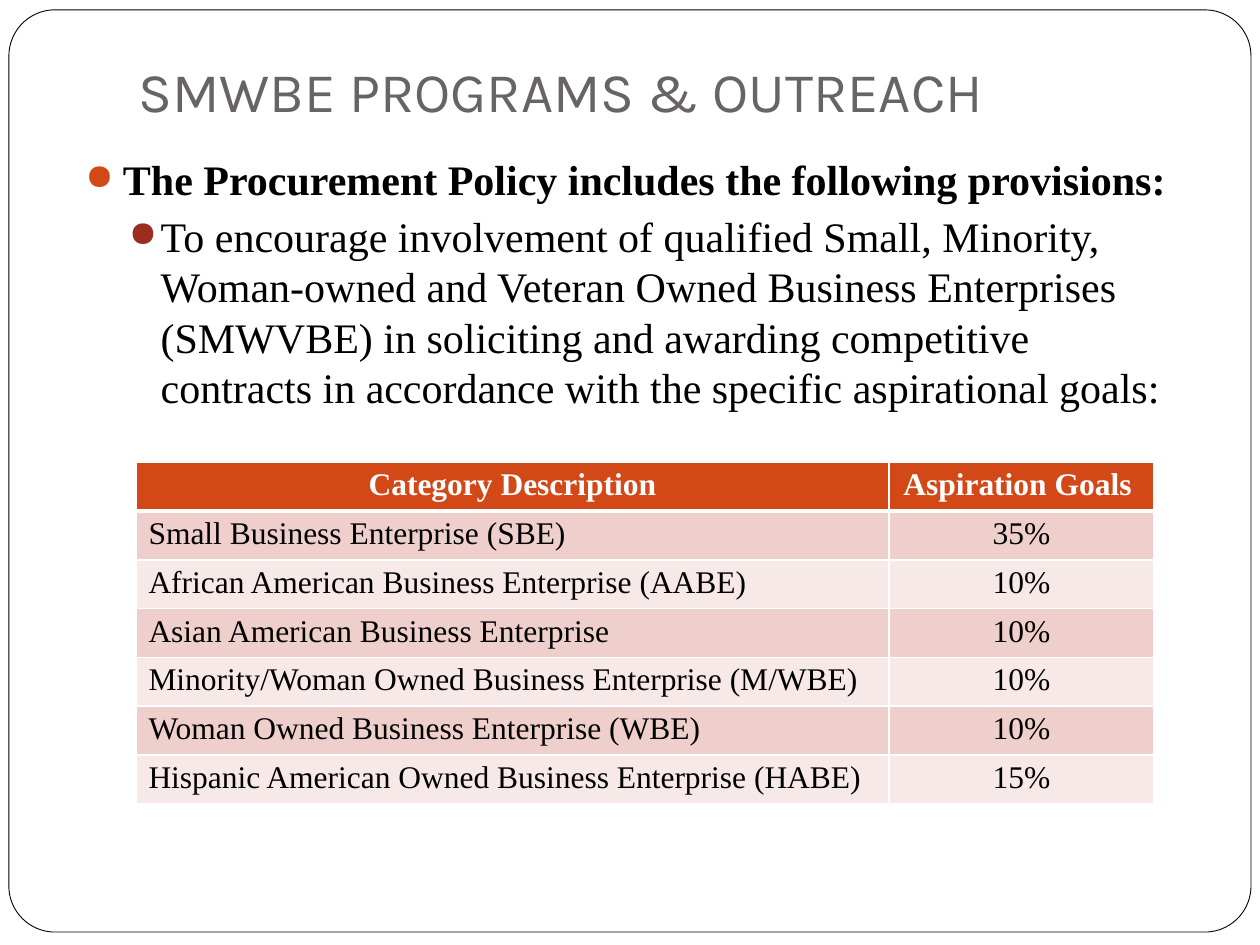
from dataclasses import dataclass

from lxml.etree import SubElement
from pptx import Presentation
from pptx.dml.color import RGBColor
from pptx.enum.shapes import MSO_SHAPE
from pptx.enum.text import MSO_ANCHOR, PP_ALIGN
from pptx.oxml.ns import qn
from pptx.util import Cm, Pt


@dataclass(frozen=True)
class Theme:
    title_font: str = "Karla"
    body_font: str = "Times New Roman"
    title_size: int = 32
    body_size: int = 24
    table_size: int = 18
    white: str = "FFFFFF"
    black: str = "000000"
    grey: str = "696464"
    orange: str = "D34817"
    red: str = "9B2D1F"
    bands: tuple = ("EFCFCC", "F7E9E8")


THEME = Theme()

PROVISIONS = [
    ("The Procurement Policy includes the following provisions:",
     dict(bold=True, before=5.8, bullet=THEME.orange, indent=0.76, hanging=0.76)),
    ("To encourage involvement of qualified Small, Minority, Woman-owned and "
     "Veteran Owned Business Enterprises (SMWVBE) in soliciting and awarding "
     "competitive contracts in accordance with the specific aspirational goals:",
     dict(level=1, before=3.7, bullet=THEME.red, indent=1.52, hanging=0.64)),
]

GOALS = [
    ("Category Description", "Aspiration Goals "),
    ("Small Business Enterprise (SBE)", "35%"),
    ("African American Business Enterprise (AABE)", "10%"),
    ("Asian American Business Enterprise", "10%"),
    ("Minority/Woman Owned Business Enterprise (M/WBE)", "10%"),
    ("Woman Owned Business Enterprise (WBE)", "10%"),
    ("Hispanic American Owned Business Enterprise (HABE)", "15%"),
]


def add_bullet(para, color, indent, hanging):
    properties = para._p.get_or_add_pPr()
    properties.set("marL", str(Cm(indent)))
    properties.set("indent", str(-Cm(hanging)))
    bullet_color = SubElement(properties, qn("a:buClr"))
    SubElement(bullet_color, qn("a:srgbClr"), val=color)
    SubElement(properties, qn("a:buSzPct"), val="85000")
    SubElement(properties, qn("a:buChar"), char="●")


def write(para, text, size, font=THEME.body_font, color=THEME.black, bold=False,
          align=PP_ALIGN.LEFT, level=0, before=0, bullet=None, indent=0, hanging=0):
    para.alignment = align
    para.level = level
    para.space_before = Pt(before)
    if bullet:
        add_bullet(para, bullet, indent, hanging)
    span = para.add_run()
    span.text = text
    span.font.name = font
    span.font.size = Pt(size)
    span.font.bold = bold
    span.font.color.rgb = RGBColor.from_string(color)


def add_frame(page, left, top, width, height):
    frame = page.shapes.add_shape(
        MSO_SHAPE.ROUNDED_RECTANGLE, Cm(left), Cm(top), Cm(width), Cm(height))
    frame.adjustments[0] = 0.05
    frame.shadow.inherit = False
    frame.fill.solid()
    frame.fill.fore_color.rgb = RGBColor.from_string(THEME.white)
    frame.line.color.rgb = RGBColor.from_string(THEME.black)
    frame.line.width = Pt(0.5)


def add_text_box(page, left, top, width, height, anchor):
    box = page.shapes.add_textbox(Cm(left), Cm(top), Cm(width), Cm(height))
    box.text_frame.word_wrap = True
    box.text_frame.vertical_anchor = anchor
    return box.text_frame


def add_title(page, left, top, width, height):
    frame = add_text_box(page, left, top, width, height, MSO_ANCHOR.BOTTOM)
    frame.margin_bottom = Cm(0.25)
    write(frame.paragraphs[0], "SMWBE PROGRAMS & OUTREACH", THEME.title_size,
          font=THEME.title_font, color=THEME.grey)


def add_provisions(page, left, top, width, height):
    frame = add_text_box(page, left, top, width, height, MSO_ANCHOR.TOP)
    for number, (text, style) in enumerate(PROVISIONS):
        para = frame.add_paragraph() if number else frame.paragraphs[0]
        write(para, text, THEME.body_size, **style)


def set_borders(cell, bottom):
    properties = cell._tc.get_or_add_tcPr()
    widths = {"a:lnL": 1, "a:lnR": 1, "a:lnT": 1, "a:lnB": bottom}
    for position, (side, width) in enumerate(widths.items()):
        line = SubElement(properties, qn(side), w=str(Pt(width)))
        fill = SubElement(line, qn("a:solidFill"))
        SubElement(fill, qn("a:srgbClr"), val=THEME.white)
        properties.insert(position, line)


def add_goals(page, left, top, width, height):
    table = page.shapes.add_table(
        len(GOALS), 2, Cm(left), Cm(top), Cm(width), Cm(height)).table
    table.columns[0].width = Cm(width * 0.74)
    table.columns[1].width = Cm(width * 0.26)
    for row, values in enumerate(GOALS):
        header = row == 0
        for column, text in enumerate(values):
            cell = table.cell(row, column)
            cell.margin_top = cell.margin_bottom = Cm(0.11)
            cell.fill.solid()
            cell.fill.fore_color.rgb = RGBColor.from_string(
                THEME.orange if header else THEME.bands[(row - 1) % 2])
            set_borders(cell, bottom=3 if header or row == 0 else 1)
            write(cell.text_frame.paragraphs[0], text, THEME.table_size, bold=header,
                  color=THEME.white if header else THEME.black,
                  align=PP_ALIGN.CENTER if header or column else PP_ALIGN.LEFT)


def build_page(page):
    add_frame(page, 0.18, 0.2, 25.04, 18.59)
    add_title(page, 2.54, 0.76, 21.59, 1.98)
    add_provisions(page, 1.47, 2.97, 22.66, 13.77)
    add_goals(page, 2.74, 9.32, 20.52, 6.65)


def main():
    deck = Presentation()
    deck.slide_width, deck.slide_height = Cm(25.4), Cm(19.05)
    build_page(deck.slides.add_slide(deck.slide_layouts[6]))
    deck.save("out.pptx")


if __name__ == "__main__":
    main()
